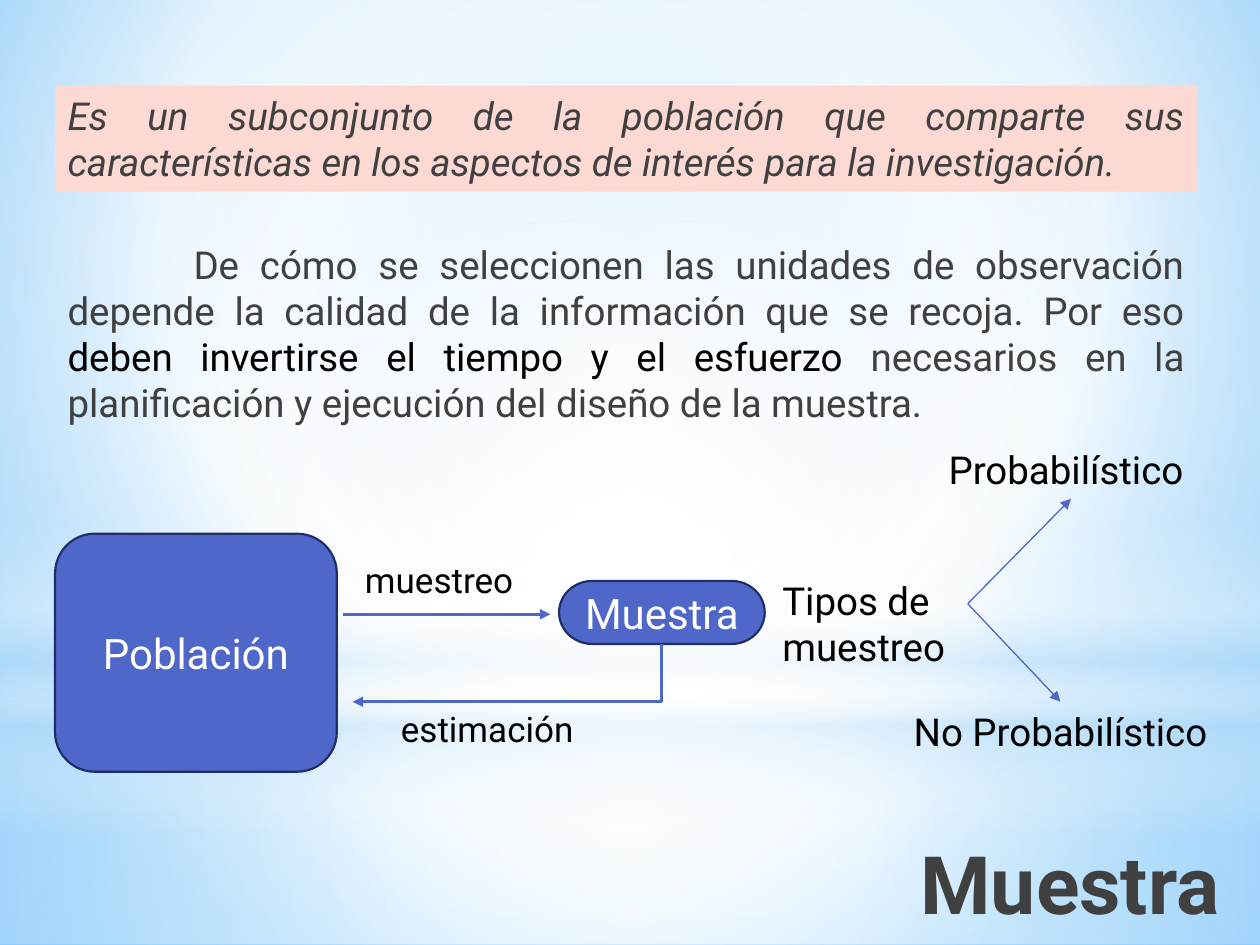
from dataclasses import dataclass, field

import pptx
import pptx.dml.color
import pptx.enum.shapes
import pptx.enum.text
import pptx.oxml
import pptx.oxml.ns
import pptx.util

Pt = pptx.util.Pt
SHAPE = pptx.enum.shapes.MSO_SHAPE
ALIGN = pptx.enum.text.PP_ALIGN
ANCHOR = pptx.enum.text.MSO_ANCHOR
NS = pptx.oxml.ns.nsdecls("a")

BLUE, NAVY, PINK, GREY = "4E67C8", "1F2E69", "FCD9D3", "404040"
BLACK, WHITE, SKY = "000000", "FFFFFF", "B4DCFA"
CENTRE = (50, 50, 50, 50)


@dataclass
class Gradient:
    stops: list  # (position %, colour, opacity %)
    focus: tuple | None = None  # left, top, right, bottom %; None is vertical


@dataclass
class Backdrop:
    kind: int
    box: tuple
    gradient: Gradient


@dataclass
class Block:
    box: tuple
    runs: list  # (text, colour)
    size: float
    kind: int | None = None  # None is a plain text box
    fill: str | None = None
    line: str | None = None
    wrap: bool = True
    align: int = ALIGN.LEFT
    anchor: int = ANCHOR.TOP
    font: dict = field(default_factory=dict)


@dataclass
class Line:
    start: tuple
    end: tuple
    width: float
    arrow: bool = True


def rgb(color: str) -> pptx.dml.color.RGBColor:
    return pptx.dml.color.RGBColor.from_string(color)


def pts(values: tuple) -> list:
    return [Pt(v) for v in values]


def set_gradient(fill, parent, gradient: Gradient) -> None:
    fill.gradient()
    old = parent.find(pptx.oxml.ns.qn("a:gradFill"))
    stops = "".join(
        f'<a:gs pos="{pos * 1000}"><a:srgbClr val="{color}">'
        f'<a:alpha val="{opacity * 1000}"/></a:srgbClr></a:gs>'
        for pos, color, opacity in gradient.stops)
    if gradient.focus:
        sides = " ".join(f'{k}="{v * 1000}"' for k, v in zip("ltrb", gradient.focus))
        shade = f'<a:path path="circle"><a:fillToRect {sides}/></a:path>'
    else:
        shade = '<a:lin ang="5400000" scaled="0"/>'
    parent.replace(old, pptx.oxml.parse_xml(
        f'<a:gradFill {NS} rotWithShape="1"><a:gsLst>{stops}</a:gsLst>{shade}</a:gradFill>'))


def add_backdrop(s, item: Backdrop):
    sp = s.shapes.add_shape(item.kind, *pts(item.box))
    sp.shadow.inherit = False
    sp.line.fill.background()
    set_gradient(sp.fill, sp._element.spPr, item.gradient)
    return sp


def write_text(sp, block: Block):
    tf = sp.text_frame
    frame = {"word_wrap": block.wrap, "vertical_anchor": block.anchor,
             "auto_size": pptx.enum.text.MSO_AUTO_SIZE.NONE}
    for name, value in frame.items():
        setattr(tf, name, value)
    p = tf.paragraphs[0]
    p.alignment = block.align
    for text, color in block.runs:
        r = p.add_run()
        r.text = text
        for name, value in {"name": "Roboto", "size": Pt(block.size), **block.font}.items():
            setattr(r.font, name, value)
        r.font.color.rgb = rgb(color)
    return p


def add_block(s, block: Block):
    if block.kind is None:
        sp = s.shapes.add_textbox(*pts(block.box))
    else:
        sp = s.shapes.add_shape(block.kind, *pts(block.box))
        sp.shadow.inherit = False
        sp.fill.solid()
        sp.fill.fore_color.rgb = rgb(block.fill)
        if block.line:
            sp.line.color.rgb = rgb(block.line)
            sp.line.width = Pt(1.25)
        else:
            sp.line.fill.background()
    return write_text(sp, block)


def add_line(s, line: Line) -> None:
    cx = s.shapes.add_connector(pptx.enum.shapes.MSO_CONNECTOR.STRAIGHT,
                                *pts(line.start + line.end))
    cx.line.color.rgb = rgb(BLUE)
    cx.line.width = Pt(line.width)
    if line.arrow:
        cx.line._get_or_add_ln().append(
            pptx.oxml.parse_xml(f'<a:tailEnd {NS} type="triangle"/>'))
    cx._element.spPr.append(pptx.oxml.parse_xml(f"<a:effectLst {NS}/>"))


BACKGROUND = Gradient([(0, "9ED5FF", 100), (60, WHITE, 100), (100, "5BB9FF", 100)],
                      (20, 10, 20, 60))
BACKDROPS = [
    Backdrop(SHAPE.RECTANGLE, (0, 402, 720, 138),
             Gradient([(0, WHITE, 91), (37, WHITE, 76), (100, SKY, 79)], CENTRE)),
    Backdrop(SHAPE.RECTANGLE, (0, 0, 720, 402),
             Gradient([(0, WHITE, 89), (48, WHITE, 62), (100, SKY, 79)], CENTRE)),
    Backdrop(SHAPE.RECTANGLE, (0, 297, 720, 180),
             Gradient([(0, WHITE, 0), (29, WHITE, 30), (45, SKY, 40),
                       (55, WHITE, 26), (65, SKY, 60), (100, WHITE, 0)])),
    Backdrop(SHAPE.OVAL, (0, 126, 720, 402),
             Gradient([(0, WHITE, 100), (56, WHITE, 0)], CENTRE)),
]

TITLE = Block((492, 470, 212, 68), [("Muestra", GREY)], 46, align=ALIGN.RIGHT,
              anchor=ANCHOR.MIDDLE, font={"bold": True})
BODY = Block((31.5, 134, 652.5, 125), [
    ("De cómo se seleccionen las unidades de observación depende la calidad "
     "de la información que se recoja. Por eso ", GREY),
    ("deben invertirse el tiempo y el esfuerzo ", BLACK),
    ("necesarios en la planificación y ejecución del diseño de la muestra.", GREY),
], 22, align=ALIGN.JUSTIFY)

node = {"size": 24, "fill": BLUE, "line": NAVY, "wrap": False,
        "align": ALIGN.CENTER, "anchor": ANCHOR.MIDDLE}
BLOCKS = [
    Block((31.5, 49, 652.5, 60.5),
          [("Es un subconjunto de la población que comparte sus características "
            "en los aspectos de interés para la investigación.", GREY)],
          22, SHAPE.RECTANGLE, PINK, align=ALIGN.JUSTIFY, font={"italic": True}),
    Block((31.5, 305, 161, 136), [("Población", WHITE)],
          kind=SHAPE.ROUNDED_RECTANGLE, **node),
    Block((319.5, 332, 117.5, 36), [("Muestra", WHITE)],
          kind=SHAPE.FLOWCHART_TERMINATOR, **node),
    Block((201.5, 315.5, 102, 31.5), [("muestreo", BLACK)], 20, wrap=False),
    Block((222, 401, 116, 31.5), [("estimación", BLACK)], 20, wrap=False),
    Block((440, 326, 113, 60), [("Tipos de muestreo", BLACK)], 22),
    Block((535, 251.5, 155, 34), [("Probabilístico", BLACK)], 22, wrap=False),
    Block((515, 401, 182, 34), [("No Probabilístico", BLACK)], 22, wrap=False),
]

CORNER, FORK = (378, 401), (553, 345)
LINES = [
    Line((196, 351), (314.5, 351), 1.5),
    Line((378, 368), CORNER, 1.5, arrow=False),
    Line(CORNER, (201.5, 401), 1.5),
    Line(FORK, (612, 285), 0.75),
    Line(FORK, (606, 401), 0.75),
]


def main() -> None:
    prs = pptx.Presentation()
    prs.slide_width, prs.slide_height = Pt(720), Pt(540)
    s = prs.slides.add_slide(prs.slide_layouts[5])

    # Background and translucent layers
    fill = s.background.fill
    fill.solid()
    set_gradient(fill, s.background._cSld.bg.bgPr, BACKGROUND)
    layers = [add_backdrop(s, item) for item in BACKDROPS]

    # Title, in front of the layers
    title = s.shapes.title
    title.left, title.top, title.width, title.height = pts(TITLE.box)
    layers[-1]._element.addnext(title._element)
    write_text(title, TITLE)

    # Paragraph with an indented first line
    p = add_block(s, BODY)
    p._p.get_or_add_pPr().set("indent", str(Pt(72)))

    # Sampling diagram
    for block in BLOCKS:
        add_block(s, block)
    for line in LINES:
        add_line(s, line)

    prs.save("out.pptx")


if __name__ == "__main__":
    main()
